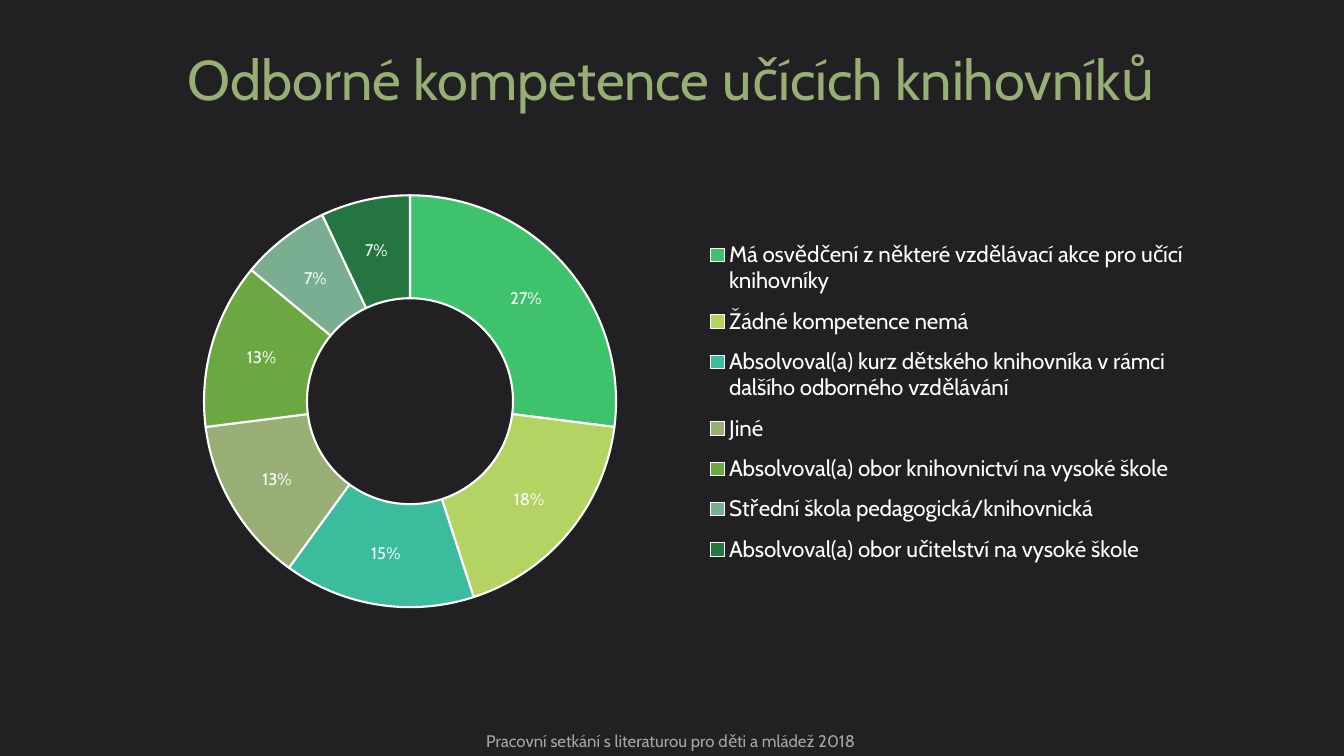
from lxml import etree
from pptx import Presentation
from pptx.chart.data import CategoryChartData
from pptx.dml.color import RGBColor
from pptx.enum import chart as ch, text
from pptx.oxml import ns, parse_xml
from pptx.util import Inches, Pt

FONT = "Cabin"
BACK = RGBColor(0x21, 0x21, 0x23)
SAGE = RGBColor(0x97, 0xAF, 0x75)
WHITE = RGBColor(0xFF, 0xFF, 0xFF)
GREY = RGBColor(0xA6, 0xA6, 0xA6)
EMERALD = RGBColor(0x3E, 0xC2, 0x6C)
LIME = RGBColor(0xB3, 0xD4, 0x63)
TEAL = RGBColor(0x3B, 0xBC, 0x9D)
GRASS = RGBColor(0x6B, 0xA8, 0x41)
MINT = RGBColor(0x79, 0xAE, 0x90)
FOREST = RGBColor(0x25, 0x75, 0x41)

COMPETENCES = [
    ("Má osvědčení z některé vzdělávací akce pro učící knihovníky", 27, EMERALD),
    ("Žádné kompetence nemá", 18, LIME),
    ("Absolvoval(a) kurz dětského knihovníka v rámci dalšího odborného vzdělávání", 15, TEAL),
    ("Jiné", 13, SAGE),
    ("Absolvoval(a) obor knihovnictví na vysoké škole", 13, GRASS),
    ("Střední škola pedagogická/knihovnická", 7, MINT),
    ("Absolvoval(a) obor učitelství na vysoké škole", 7, FOREST),
]


def write(sp, content, size, color, anchor):
    tf = sp.text_frame
    tf.word_wrap = True
    tf.auto_size = text.MSO_AUTO_SIZE.NONE
    tf.vertical_anchor = anchor
    p = tf.paragraphs[0]
    p.alignment = text.PP_ALIGN.CENTER
    r = p.add_run()
    r.text = content
    r.font.size = Pt(size)
    r.font.name = FONT
    r.font.color.rgb = color
    return r


def set_layout(parent, index, x, y, w, h, inner=False):
    for old in parent.findall(ns.qn("c:layout")):
        parent.remove(old)
    layout = etree.Element(ns.qn("c:layout"))
    manual = etree.SubElement(layout, ns.qn("c:manualLayout"))
    items = [("layoutTarget", "inner")] if inner else []
    items += [("xMode", "edge"), ("yMode", "edge"), ("x", x), ("y", y), ("w", w), ("h", h)]
    for tag, val in items:
        etree.SubElement(manual, ns.qn("c:" + tag)).set("val", str(val))
    parent.insert(index, layout)


prs = Presentation()
prs.slide_width = Inches(13.33)
prs.slide_height = Inches(7.5)
s = prs.slides.add_slide(prs.slide_layouts[5])
s.background.fill.solid()
s.background.fill.fore_color.rgb = BACK

title = s.shapes.title
title.left, title.top, title.width, title.height = (Inches(v) for v in (1, 0.24, 11.32, 1.06))
r = write(title, "Odborné kompetence učících knihovníků", 40, SAGE, text.MSO_ANCHOR.MIDDLE)
shadow = parse_xml(
    f'<a:effectLst {ns.nsdecls("a")}><a:outerShdw blurRad="38100" dist="38100" dir="2700000">'
    '<a:srgbClr val="000000"><a:alpha val="60000"/></a:srgbClr></a:outerShdw></a:effectLst>'
)
r.font.fill._xPr.find(ns.qn("a:solidFill")).addnext(shadow)

data = CategoryChartData()
data.categories = [name for name, _, _ in COMPETENCES]
data.add_series("Series 1", [share for _, share, _ in COMPETENCES])
chart = s.shapes.add_chart(
    ch.XL_CHART_TYPE.DOUGHNUT, Inches(0.62), Inches(1.77), Inches(11.32), Inches(4.44), data
).chart
chart.has_title = False
chart.font.name = FONT
chart.font.size = Pt(10)
chart.font.color.rgb = WHITE

plot = chart.plots[0]
plot.vary_by_categories = True
for i, (_, _, color) in enumerate(COMPETENCES):
    fmt = plot.series[0].points[i].format
    fmt.fill.solid()
    fmt.fill.fore_color.rgb = color
    fmt.line.color.rgb = WHITE
    fmt.line.width = Pt(1.5)

plot.has_data_labels = True
labels = plot.data_labels
labels.show_percentage = True
labels.show_value = False
labels.number_format = "0%"
labels.number_format_is_linked = False

chart.has_legend = True
legend = chart.legend
legend.position = ch.XL_LEGEND_POSITION.RIGHT
legend.include_in_layout = False
for font, size in ((labels.font, 12), (legend.font, 16)):
    font.name = FONT
    font.size = Pt(size)
    font.color.rgb = WHITE

set_layout(chart._chartSpace.chart.plotArea, 0, 0.124, 0.037, 0.361, 0.922, inner=True)
set_layout(legend._element, 1, 0.56, 0.11, 0.43, 0.78)

footer = s.shapes.add_textbox(Inches(-0.01), Inches(7.1), Inches(13.33), Inches(0.4))
write(footer, "Pracovní setkání s literaturou pro děti a mládež 2018", 12, GREY, text.MSO_ANCHOR.BOTTOM)

prs.save("out.pptx")
